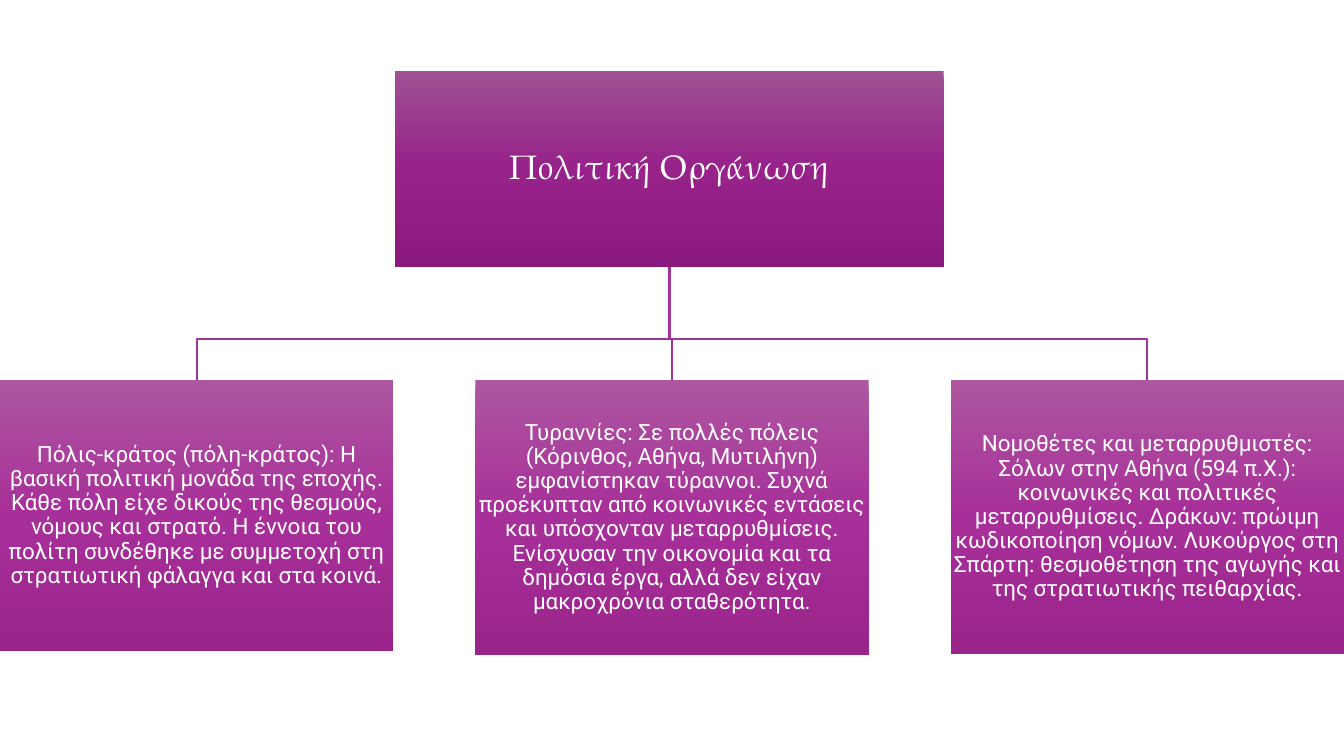
import copy
from dataclasses import dataclass

import pptx
import pptx.dml.color
import pptx.enum.shapes
import pptx.enum.text
import pptx.oxml.ns
import pptx.util

Inches = pptx.util.Inches


@dataclass(frozen=True)
class Theme:
    title_gradient: tuple = ("9F5194", "97228A", "8A197E")
    branch_gradient: tuple = ("AD57A1", "A72F99", "99258B")
    line: str = "A13595"
    text: str = "FFFFFF"
    title_font: str = "TeX Gyre Pagella"
    body_font: str = "Roboto"
    title_size: int = 24
    body_size: int = 16
    line_width: float = 1.5


def color(value):
    return pptx.dml.color.RGBColor.from_string(value)


class ChartSlide:
    def __init__(self, slide, theme):
        self.slide = slide
        self.theme = theme

    def elbow(self, points):
        """Draw an open line through points given in inches."""
        corners = [(Inches(x), Inches(y)) for x, y in points]
        builder = self.slide.shapes.build_freeform(*corners[0])
        builder.add_line_segments(corners[1:], close=False)
        shape = builder.convert_to_shape()
        shape.shadow.inherit = False
        shape.fill.background()
        shape.line.color.rgb = color(self.theme.line)
        shape.line.width = pptx.util.Pt(self.theme.line_width)

    def gradient(self, shape, colors):
        """Fill from top to bottom with three evenly spaced colours."""
        shape.fill.gradient()
        shape.fill.gradient_angle = 270
        stop_list = shape._element.spPr.find(".//" + pptx.oxml.ns.qn("a:gsLst"))
        stop_list.insert(1, copy.deepcopy(stop_list[0]))
        for index, stop in enumerate(shape.fill.gradient_stops):
            stop.position = index / 2
            stop.color.rgb = color(colors[index])

    def box(self, left, top, width, height, text, colors, font, size, inset):
        shape = self.slide.shapes.add_shape(
            pptx.enum.shapes.MSO_SHAPE.RECTANGLE,
            Inches(left), Inches(top), Inches(width), Inches(height))
        shape.shadow.inherit = False
        shape.line.fill.background()
        self.gradient(shape, colors)

        frame = shape.text_frame
        frame.text = text
        frame.word_wrap = True
        frame.vertical_anchor = pptx.enum.text.MSO_ANCHOR.MIDDLE
        frame.margin_left = frame.margin_right = Inches(inset)
        frame.margin_top = frame.margin_bottom = Inches(inset)
        paragraph = frame.paragraphs[0]
        paragraph.alignment = pptx.enum.text.PP_ALIGN.CENTER
        paragraph.line_spacing = 0.9
        run = paragraph.runs[0]
        run.font.name = font
        run.font.size = pptx.util.Pt(size)
        run.font.color.rgb = color(self.theme.text)


SLIDE_WIDTH, SLIDE_HEIGHT = 13.33, 7.5
TITLE = "Πολιτική Οργάνωση"
TITLE_LEFT, TITLE_TOP, TITLE_WIDTH, TITLE_HEIGHT = 3.92, 0.7, 5.44, 1.95
BRANCH_TOP, BRANCH_WIDTH = 3.77, 3.9
BUS_Y = 3.36

# Height and text of each branch, from left to right
BRANCHES = [
    (2.69, "Πόλις-κράτος (πόλη-κράτος): Η βασική πολιτική μονάδα της εποχής. "
           "Κάθε πόλη είχε δικούς της θεσμούς, νόμους και στρατό. Η έννοια του "
           "πολίτη συνδέθηκε με συμμετοχή στη στρατιωτική φάλαγγα και στα κοινά."),
    (2.73, "Τυραννίες: Σε πολλές πόλεις (Κόρινθος, Αθήνα, Μυτιλήνη) εμφανίστηκαν "
           "τύραννοι. Συχνά προέκυπταν από κοινωνικές εντάσεις και υπόσχονταν "
           "μεταρρυθμίσεις. Ενίσχυσαν την οικονομία και τα δημόσια έργα, αλλά δεν "
           "είχαν μακροχρόνια σταθερότητα."),
    (2.72, "Νομοθέτες και μεταρρυθμιστές: Σόλων στην Αθήνα (594 π.Χ.): κοινωνικές "
           "και πολιτικές μεταρρυθμίσεις. Δράκων: πρώιμη κωδικοποίηση νόμων. "
           "Λυκούργος στη Σπάρτη: θεσμοθέτηση της αγωγής και της στρατιωτικής "
           "πειθαρχίας."),
]


def main():
    presentation = pptx.Presentation()
    presentation.slide_width = Inches(SLIDE_WIDTH)
    presentation.slide_height = Inches(SLIDE_HEIGHT)
    theme = Theme()
    chart = ChartSlide(
        presentation.slides.add_slide(presentation.slide_layouts[6]), theme)

    # Branches spread evenly over the slide width
    step = (SLIDE_WIDTH - BRANCH_WIDTH) / (len(BRANCHES) - 1)
    lefts = [index * step for index in range(len(BRANCHES))]

    # Lines from the title down to each branch
    title_x = TITLE_LEFT + TITLE_WIDTH / 2
    for left in lefts:
        branch_x = left + BRANCH_WIDTH / 2
        chart.elbow([(title_x, TITLE_TOP + TITLE_HEIGHT), (title_x, BUS_Y),
                     (branch_x, BUS_Y), (branch_x, BRANCH_TOP)])

    # Title box
    chart.box(TITLE_LEFT, TITLE_TOP, TITLE_WIDTH, TITLE_HEIGHT, TITLE,
              theme.title_gradient, theme.title_font, theme.title_size, 0.02)

    # Branch boxes
    for left, (height, text) in zip(lefts, BRANCHES):
        chart.box(left, BRANCH_TOP, BRANCH_WIDTH, height, text,
                  theme.branch_gradient, theme.body_font, theme.body_size, 0.01)

    presentation.save("out.pptx")


if __name__ == "__main__":
    main()
